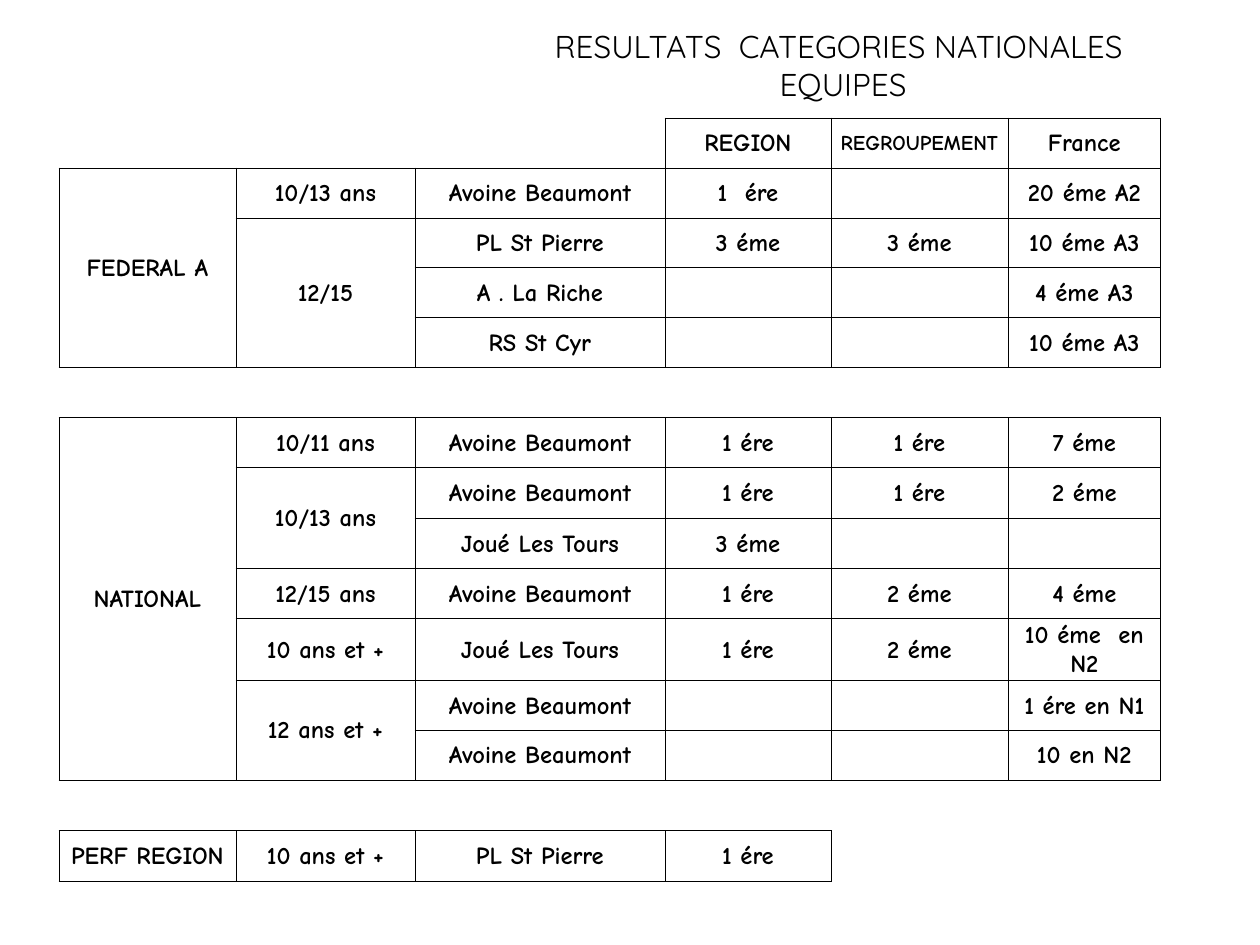
"""Build the slide of national team results by category."""
from itertools import pairwise
from typing import NamedTuple

from lxml.etree import SubElement
from pptx import Presentation
from pptx.dml.color import RGBColor
from pptx.enum.text import MSO_ANCHOR, PP_ALIGN
from pptx.oxml.ns import qn
from pptx.util import Emu, Pt

SCALE = 914400 / 126
BLACK = RGBColor(0, 0, 0)
XS = (59, 236, 415, 665, 831, 1008, 1161)
YS = (118, 168, 218, 268, 318, 368, 418, 468, 519, 569, 619, 681, 731, 781, 831, 882)
SIDES = {"a:lnL": (0, -1), "a:lnR": (0, 1), "a:lnT": (-1, 0), "a:lnB": (1, 0)}


class Row(NamedTuple):
    texts: tuple[str, ...] = ()
    start: int = 0
    stop: int = 6


class Span(NamedTuple):
    row: int
    col: int
    count: int


ROWS = (
    Row(("", "", "", "REGION", "REGROUPEMENT", "France"), start=3),
    Row(("FEDERAL A", "10/13 ans", "Avoine Beaumont", "1  ére", "", "20 éme A2")),
    Row(("", "12/15", "PL St Pierre", "3 éme", "3 éme", "10 éme A3")),
    Row(("", "", "A . La Riche", "", "", "4 éme A3")),
    Row(("", "", "RS St Cyr", "", "", "10 éme A3")),
    Row(stop=0),
    Row(("NATIONAL", "10/11 ans", "Avoine Beaumont", "1 ére", "1 ére", "7 éme")),
    Row(("", "10/13 ans", "Avoine Beaumont", "1 ére", "1 ére", "2 éme")),
    Row(("", "", "Joué Les Tours", "3 éme")),
    Row(("", "12/15 ans", "Avoine Beaumont", "1 ére", "2 éme", "4 éme")),
    Row(("", "10 ans et +", "Joué Les Tours", "1 ére", "2 éme", "10 éme  en N2")),
    Row(("", "12 ans et +", "Avoine Beaumont", "", "", "1 ére en N1")),
    Row(("", "", "Avoine Beaumont", "", "", "10 en N2")),
    Row(stop=0),
    Row(("PERF REGION", "10 ans et +", "PL St Pierre", "1 ére"), stop=4),
)
SPANS = (Span(1, 0, 4), Span(2, 1, 3), Span(6, 0, 7), Span(7, 1, 2), Span(11, 1, 2))


def px(count: int) -> Emu:
    return Emu(round(count * SCALE))


def write(frame, text: str, *, font: str, size: int, bold: bool = False) -> None:
    para = frame.paragraphs[0]
    para.alignment = PP_ALIGN.CENTER
    run = para.add_run()
    run.text = text
    run.font.name, run.font.size, run.font.bold = font, Pt(size), bold
    run.font.color.rgb = BLACK


def framed(row: int, col: int) -> bool:
    return 0 <= row < len(ROWS) and ROWS[row].start <= col < ROWS[row].stop


def border(cell, row: int, col: int) -> None:
    props = cell._tc.get_or_add_tcPr()
    for tag, (down, right) in SIDES.items():
        line = SubElement(props, qn(tag), w=str(Pt(0.5)))
        if framed(row, col) or framed(row + down, col + right):
            fill = SubElement(line, qn("a:solidFill"))
            SubElement(fill, qn("a:srgbClr"), val=str(BLACK))
        else:
            SubElement(line, qn("a:noFill"))


def add_title(slide) -> None:
    box = slide.shapes.add_textbox(px(525), px(21), px(636), px(89))
    box.text_frame.word_wrap = True
    write(box.text_frame, "RESULTATS  CATEGORIES NATIONALES  EQUIPES",
          font="Quicksand", size=18)


def add_grid(slide) -> None:
    table = slide.shapes.add_table(
        len(ROWS), len(XS) - 1, px(XS[0]), px(YS[0]),
        px(XS[-1] - XS[0]), px(YS[-1] - YS[0])).table
    table.first_row = table.horz_banding = False
    for column, (left, right) in zip(table.columns, pairwise(XS)):
        column.width = px(right - left)
    for line, (top, base) in zip(table.rows, pairwise(YS)):
        line.height = px(base - top)
    for row, line in enumerate(table.rows):
        for col, cell in enumerate(line.cells):
            border(cell, row, col)
            cell.fill.background()
            cell.vertical_anchor = MSO_ANCHOR.MIDDLE
            cell.margin_left = cell.margin_right = cell.margin_top = px(1)
            cell.margin_bottom = 0
        for cell, text in zip(line.cells, ROWS[row].texts):
            if text:
                size = 12 if text == "REGROUPEMENT" else 14
                write(cell.text_frame, text, font="Comic Neue", size=size, bold=True)
    for row, col, count in SPANS:
        table.cell(row, col).merge(table.cell(row + count - 1, col))


def main() -> None:
    deck = Presentation()
    deck.slide_width, deck.slide_height = px(1260), px(945)
    slide = deck.slides.add_slide(deck.slide_layouts[6])
    add_title(slide)
    add_grid(slide)
    deck.save("out.pptx")


if __name__ == "__main__":
    main()
